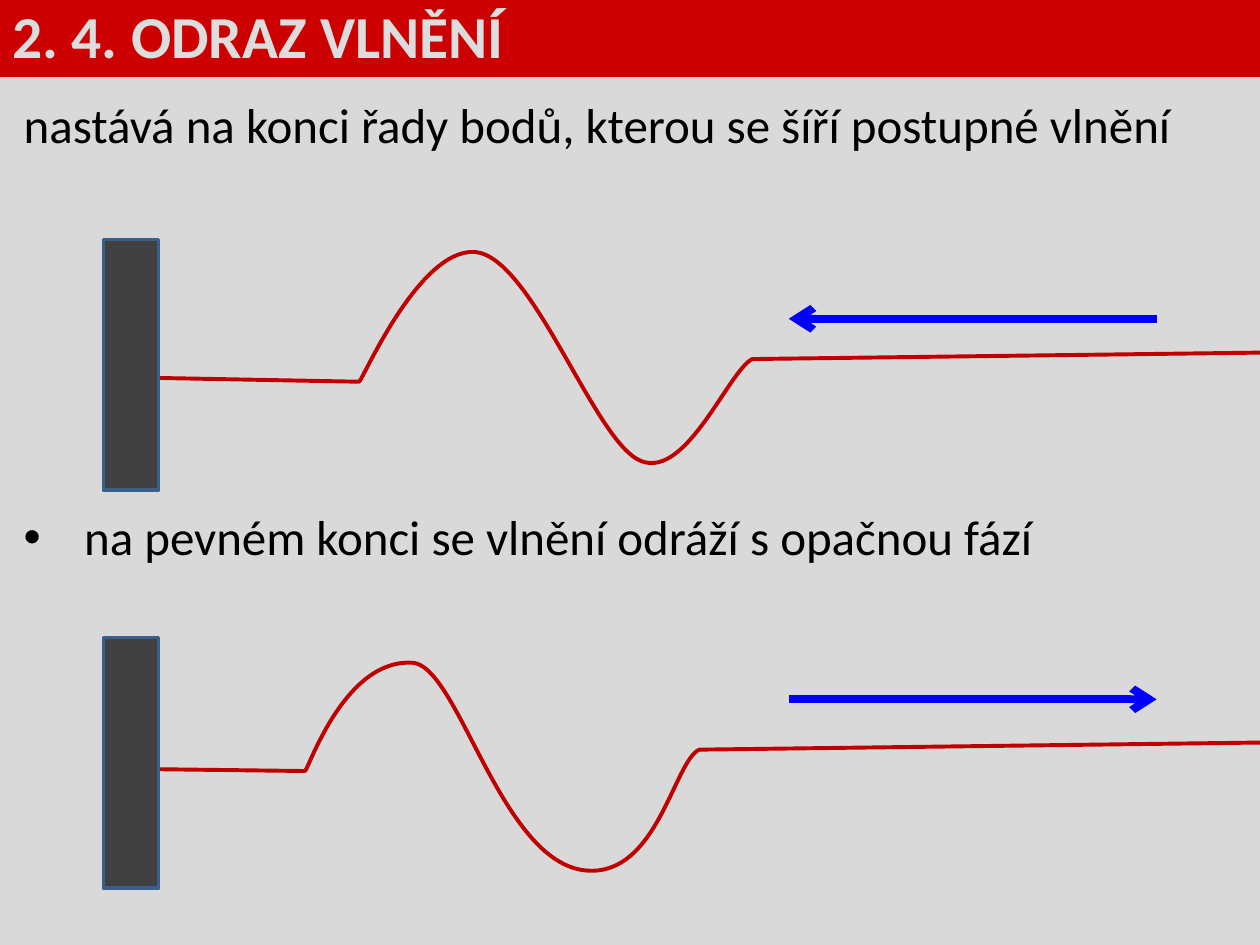
from lxml import etree
from pptx import Presentation, util as u
from pptx.dml.color import RGBColor
from pptx.enum import shapes, text
from pptx.oxml.ns import qn

BACKGROUND = RGBColor(0xD9, 0xD9, 0xD9)
BANNER = RGBColor(0xCC, 0x00, 0x00)
BANNER_TEXT = RGBColor(0xDD, 0xDD, 0xDD)
BODY_TEXT = RGBColor(0x00, 0x00, 0x00)
ROPE = RGBColor(0xC0, 0x00, 0x00)
WALL = RGBColor(0x40, 0x40, 0x40)
WALL_EDGE = RGBColor(0x3A, 0x5F, 0x8C)
ARROW = RGBColor(0x00, 0x00, 0xFF)

FONT = "Calibri"
WALL_LEFT, WALL_WIDTH, WALL_HEIGHT = 0.82, 0.44, 1.99
ARROW_LEFT, ARROW_RIGHT = 6.26, 9.18

INCOMING_WAVE = [
    [(1.26, 3)], [(2.85, 3.03)],
    [(2.87, 3.04), (3.32, 1.97), (3.77, 2)],
    [(4.23, 2.04), (4.72, 3.52), (5.09, 3.66)],
    [(5.45, 3.8), (5.78, 2.95), (5.97, 2.85)],
    [(11.5, 2.78)],
]
REFLECTED_WAVE = [
    [(0.83, 6.1)], [(2.42, 6.12)],
    [(2.44, 6.13), (2.72, 5.25), (3.25, 5.26)],
    [(3.63, 5.22), (3.96, 6.86), (4.66, 6.91)],
    [(5.22, 6.95), (5.35, 6.04), (5.55, 5.95)],
    [(11.08, 5.88)],
]


def style_text(paragraph, size, color, bold=False):
    """Set the font of a whole paragraph."""
    font = paragraph.font
    font.name, font.size, font.bold = FONT, u.Pt(size), bold
    font.color.rgb = color


def add_bullet(paragraph, indent):
    """Give a paragraph a round bullet with a hanging indent."""
    props = paragraph._p.get_or_add_pPr()
    props.set("marL", str(u.Inches(indent)))
    props.set("indent", str(-u.Inches(indent)))
    etree.SubElement(props, qn("a:buFont")).set("typeface", "Arial")
    etree.SubElement(props, qn("a:buChar")).set("char", "•")


def add_block(slide, left, top, width, height, fill):
    """Add a flat filled rectangle without an outline."""
    block = slide.shapes.add_shape(
        shapes.MSO_SHAPE.RECTANGLE, *map(u.Inches, (left, top, width, height)))
    block.shadow.inherit = False
    block.fill.solid()
    block.fill.fore_color.rgb = fill
    block.line.fill.background()
    return block


def add_banner(slide, heading):
    """Add the heading strip across the top of the slide."""
    banner = add_block(slide, 0, -0.06, 10, 0.67, BANNER)
    frame = banner.text_frame
    frame.vertical_anchor = text.MSO_ANCHOR.TOP
    frame.text = heading
    paragraph = frame.paragraphs[0]
    paragraph.alignment = text.PP_ALIGN.LEFT
    style_text(paragraph, 34, BANNER_TEXT, bold=True)


def add_explanation(slide, statement, rule):
    """Add the statement and, below the first wave, the bulleted rule."""
    box = slide.shapes.add_textbox(*map(u.Inches, (0.09, 0.7, 10.16, 7.17)))
    frame = box.text_frame
    frame.word_wrap = True
    frame.text = statement
    bullet = frame.add_paragraph()
    bullet.text = rule
    bullet.space_before = u.Pt(202)
    add_bullet(bullet, 0.48)
    for paragraph in frame.paragraphs:
        style_text(paragraph, 28, BODY_TEXT)


def add_wall(slide, top):
    """Add the fixed wall that reflects the wave."""
    wall = add_block(slide, WALL_LEFT, top, WALL_WIDTH, WALL_HEIGHT, WALL)
    wall.line.color.rgb = WALL_EDGE
    wall.line.width = u.Pt(2)


def bend_segments(rope, pieces):
    """Merge the straight segments of each control triple into one curve."""
    segments = iter(list(rope._element.iter(qn("a:lnTo"))))
    for piece in pieces[1:]:
        steps = [next(segments) for _ in piece]
        if len(steps) == 3:
            curve = etree.Element(qn("a:cubicBezTo"))
            steps[0].addprevious(curve)
            for step in steps:
                curve.append(step[0])
                step.getparent().remove(step)


def add_wave(slide, pieces):
    """Draw a rope from single points (straight) and control triples (curved)."""
    start, *rest = [(u.Inches(x), u.Inches(y)) for piece in pieces for x, y in piece]
    builder = slide.shapes.build_freeform(*start)
    builder.add_line_segments(rest, close=False)
    rope = builder.convert_to_shape()
    bend_segments(rope, pieces)
    rope.shadow.inherit = False
    rope.fill.background()
    rope.line.color.rgb = ROPE
    rope.line.width = u.Pt(2.25)


def add_direction(slide, start, end, y):
    """Add an arrow that shows where the wave travels."""
    arrow = slide.shapes.add_connector(
        shapes.MSO_CONNECTOR.STRAIGHT, *map(u.Inches, (start, y, end, y)))
    arrow.line.color.rgb = ARROW
    arrow.line.width = u.Pt(4.5)
    props = arrow._element.spPr
    etree.SubElement(props.find(qn("a:ln")), qn("a:tailEnd")).set("type", "arrow")
    etree.SubElement(props, qn("a:effectLst"))


def main():
    """Build the slide on wave reflection and save it."""
    deck = Presentation()
    deck.slide_width, deck.slide_height = u.Inches(10), u.Inches(7.5)
    slide = deck.slides.add_slide(deck.slide_layouts[6])
    slide.background.fill.solid()
    slide.background.fill.fore_color.rgb = BACKGROUND

    add_explanation(
        slide,
        "nastává na konci řady bodů, kterou se šíří postupné vlnění",
        "na pevném konci se vlnění odráží s opačnou fází")
    add_banner(slide, "2. 4. ODRAZ VLNĚNÍ")
    for wave, wall_top in ((INCOMING_WAVE, 1.9), (REFLECTED_WAVE, 5.06)):
        add_wave(slide, wave)
        add_wall(slide, wall_top)
    add_direction(slide, ARROW_RIGHT, ARROW_LEFT, 2.53)
    add_direction(slide, ARROW_LEFT, ARROW_RIGHT, 5.55)
    deck.save("out.pptx")


if __name__ == "__main__":
    main()
